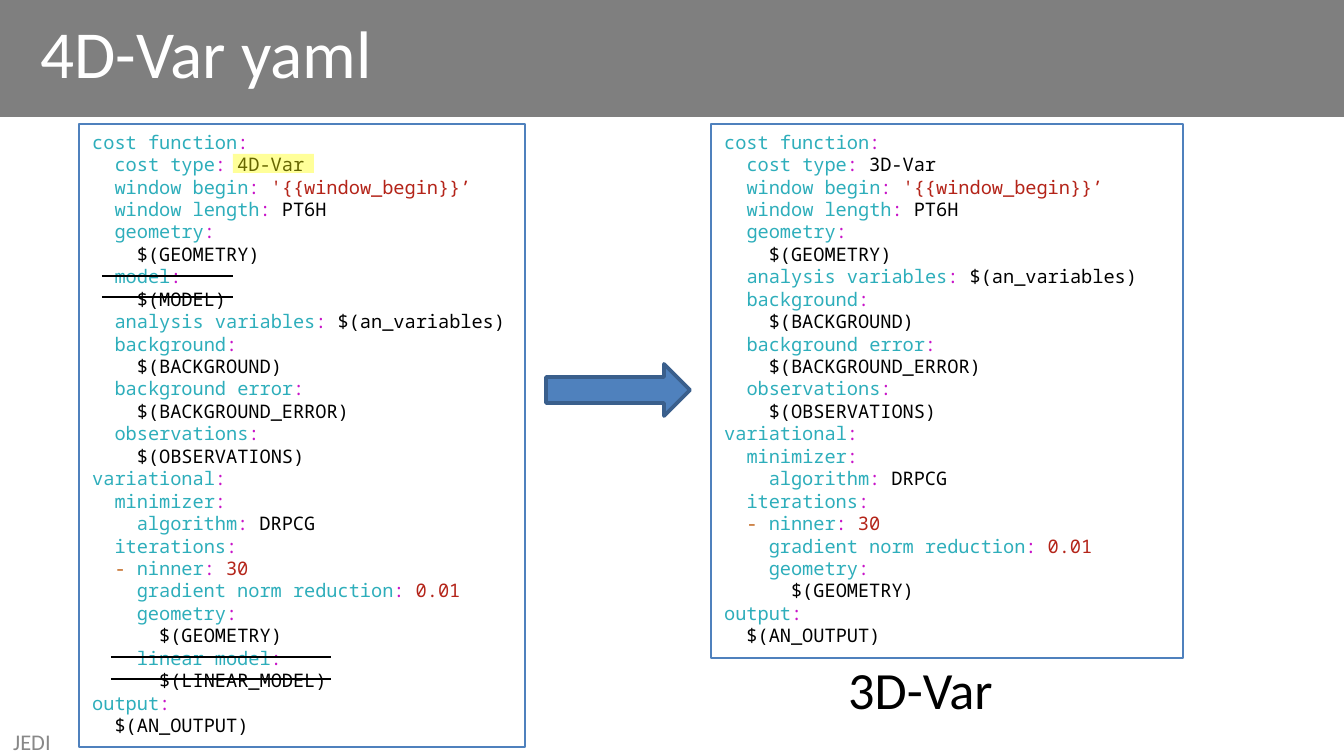
"""Build the slide that turns a 4D-Var yaml into a 3D-Var one."""
from lxml import etree
from pptx import Presentation, util as u
from pptx.dml import color
from pptx.enum import shapes, text
from pptx.oxml import ns

PX = 914400 / 134.4
CODE = """cost function:
  cost type: 4D-Var
  window begin: '{{window_begin}}’
  window length: PT6H
  geometry:
    $(GEOMETRY)
  model:
    $(MODEL)
  analysis variables: $(an_variables)
  background:
    $(BACKGROUND)
  background error:
    $(BACKGROUND_ERROR)
  observations:
    $(OBSERVATIONS)
variational:
  minimizer:
    algorithm: DRPCG
  iterations:
  - ninner: 30
    gradient norm reduction: 0.01
    geometry:
      $(GEOMETRY)
    linear model:
      $(LINEAR_MODEL)
output:
  $(AN_OUTPUT)""".split("\n")
GONE = ("model:", "$(MODEL)", "linear model:", "$(LINEAR_MODEL)")
SHORT = [row.replace("4D", "3D") for row in CODE if row.strip() not in GONE]


def paint(fill, hue):
    fill.solid()
    fill.fore_color.rgb = color.RGBColor.from_string(hue)


def write(para, words, size=10, face="Noto Sans Mono", hue="000000"):
    run = para.add_run()
    run.text = words
    run.font.size = u.Pt(size)
    run.font.name = face
    paint(run.font.fill, hue)


deck = Presentation()
deck.slide_width, deck.slide_height = u.Emu(int(1344 * PX)), u.Emu(int(756 * PX))
slide = deck.slides.add_slide(deck.slide_layouts[6])
tree = slide.shapes

band = tree.add_shape(shapes.MSO_SHAPE.RECTANGLE, 0, 0, deck.slide_width, int(117 * PX))
band.shadow.inherit = False
paint(band.fill, "000000")
band.line.fill.background()

for words, spot, size, hue, hold in (
    ("4D-Var yaml", (27, 0, 1121, 104), 36, "FFFFFF", text.MSO_ANCHOR.MIDDLE),
    ("JEDI", (0, 728, 313, 28), 12, "888888", text.MSO_ANCHOR.MIDDLE),
    ("3D-Var", (835, 651, 176, 77), 28, "000000", text.MSO_ANCHOR.TOP),
):
    frame = tree.add_textbox(*[int(n * PX) for n in spot]).text_frame
    frame.word_wrap = True
    frame.vertical_anchor = hold
    write(frame.paragraphs[0], words, size=size, face="Calibri", hue=hue)

for rows, spot in ((CODE, (79, 124, 446, 623)), (SHORT, (711, 124, 472, 534))):
    box = tree.add_textbox(*[int(n * PX) for n in spot])
    paint(box.line.fill, "4F81BD")
    box.line.width = u.Pt(0.75)
    frame = box.text_frame
    frame.word_wrap = True
    for i, row in enumerate(rows):
        para = frame.add_paragraph() if i else frame.paragraphs[0]
        key, colon, value = row.partition(":")
        if not colon:
            write(para, row)
            continue
        name = key.lstrip(" -")
        lead = key[:len(key) - len(name)]
        tone = "B42419" if value[1:2] in ("'", "3", "0") and value != " 3D-Var" else "000000"
        for part, hue in ((lead, "C1651C"), (name, "2EAEBB"), (colon, "C814C9"), (value, tone)):
            if part:
                write(para, part, hue=hue)

arrow = tree.add_shape(shapes.MSO_SHAPE.RIGHT_ARROW, *[int(n * PX) for n in (546, 364, 144, 52)])
arrow.shadow.inherit = False
paint(arrow.fill, "4F81BD")
paint(arrow.line.fill, "3A5F8C")
arrow.line.width = u.Pt(2)

mark = tree.add_shape(shapes.MSO_SHAPE.RECTANGLE, *[int(n * PX) for n in (233, 154, 81, 19)])
mark.shadow.inherit = False
paint(mark.fill, "FFFF00")
mark.line.fill.background()

for veil, part in ((band, 50), (mark, 40)):
    tint = veil.element.spPr.find(".//" + ns.qn("a:srgbClr"))
    etree.SubElement(tint, ns.qn("a:alpha")).set("val", str(part * 1000))

for left, right, top in ((102, 233, 276), (102, 233, 297), (111, 331, 657), (111, 331, 679)):
    ends = [int(n * PX) for n in (left, top, right, top)]
    strike = tree.add_connector(shapes.MSO_CONNECTOR.STRAIGHT, *ends)
    paint(strike.line.fill, "000000")
    strike.line.width = u.Pt(1.5)
    etree.SubElement(strike.element.spPr, ns.qn("a:effectLst"))

deck.save("out.pptx")
